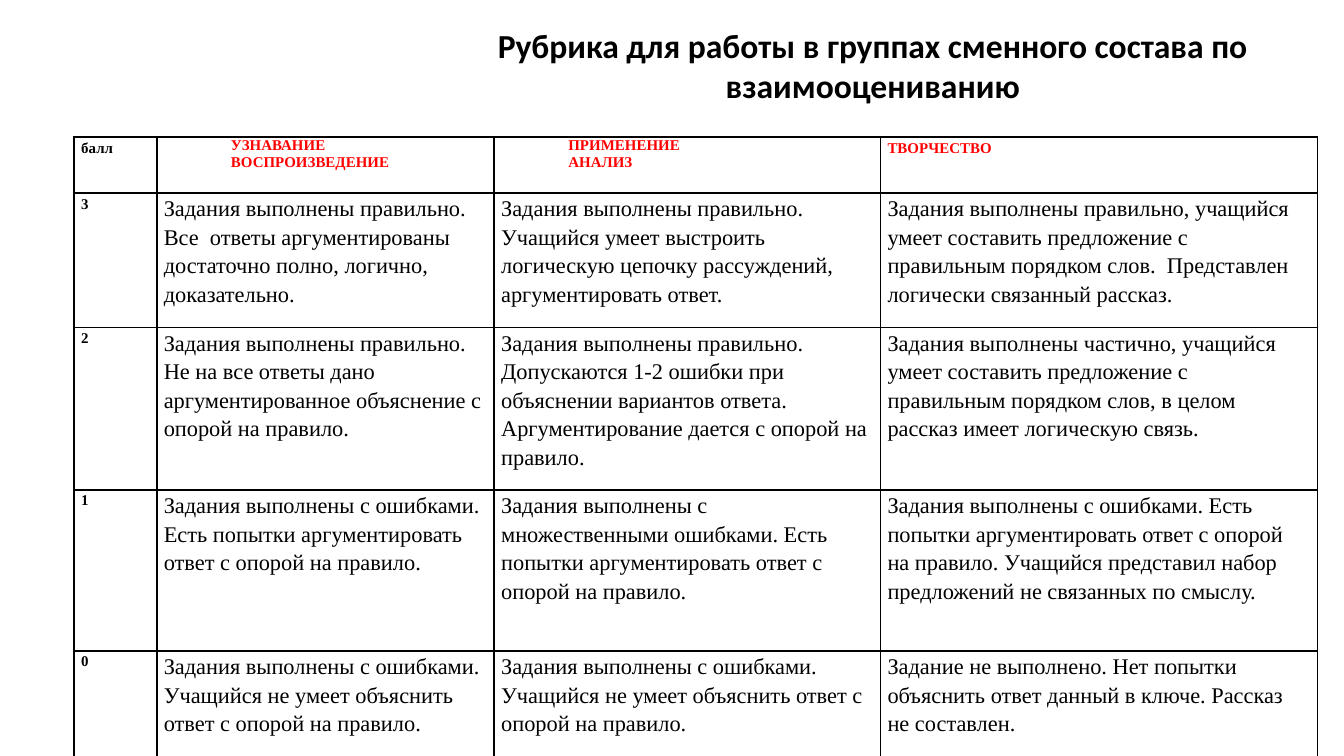
from pptx import Presentation
from pptx import util as u
from pptx.dml.color import RGBColor
from pptx.enum import text
from pptx.oxml.ns import qn
from lxml import etree

EMU_PER_PX = 9525
BLACK = RGBColor(0x00, 0x00, 0x00)
RED = RGBColor(0xFF, 0x00, 0x00)

TITLE = "Рубрика для работы в группах сменного состава по взаимооцениванию"
COLUMN_WIDTHS = [59, 241, 276, 312]
ROW_HEIGHTS = [40, 96, 116, 115, 76]
HEADER_INDENT = 48
CELL_INSET = 5

SCORE_HEADER = "балл"
LEVEL_HEADERS = [
    ["УЗНАВАНИЕ  ВОСПРОИЗВЕДЕНИЕ"],
    ["ПРИМЕНЕНИЕ ", "АНАЛИЗ"],
    ["ТВОРЧЕСТВО"],
]
CRITERIA = [
    ("3",
     "Задания выполнены правильно. Все  ответы аргументированы достаточно полно, "
     "логично, доказательно.",
     "Задания выполнены правильно. Учащийся умеет выстроить логическую цепочку "
     "рассуждений, аргументировать ответ.",
     "Задания выполнены правильно, учащийся умеет составить предложение с правильным "
     "порядком слов.  Представлен логически связанный рассказ."),
    ("2",
     "Задания выполнены правильно. Не на все ответы дано аргументированное объяснение "
     "с опорой на правило.",
     "Задания выполнены правильно. Допускаются 1-2 ошибки при объяснении вариантов "
     "ответа. Аргументирование дается с опорой на правило.",
     "Задания выполнены частично, учащийся умеет составить предложение с правильным "
     "порядком слов, в целом рассказ имеет логическую связь."),
    ("1",
     "Задания выполнены с ошибками. Есть попытки аргументировать ответ с опорой на "
     "правило.",
     "Задания выполнены с множественными ошибками. Есть попытки аргументировать ответ "
     "с опорой на правило.",
     "Задания выполнены с ошибками. Есть попытки аргументировать ответ с опорой на "
     "правило. Учащийся представил набор предложений не связанных по смыслу."),
    ("0",
     "Задания выполнены с ошибками. Учащийся не умеет объяснить ответ с опорой на "
     "правило.",
     "Задания выполнены с ошибками. Учащийся не умеет объяснить ответ с опорой на "
     "правило.",
     "Задание не выполнено. Нет попытки объяснить ответ данный в ключе. Рассказ не "
     "составлен."),
]


def px(length):
    return u.Emu(length * EMU_PER_PX)


def add_run(paragraph, wording, size, font="Times New Roman", color=BLACK, bold=False):
    run = paragraph.add_run()
    run.text = wording
    run.font.name = font
    run.font.size = u.Pt(size)
    run.font.bold = bold
    run.font.color.rgb = color


def add_title(slide):
    frame = slide.shapes.add_textbox(px(303), px(13), px(641), px(68)).text_frame
    frame.word_wrap = True
    frame.auto_size = text.MSO_AUTO_SIZE.SHAPE_TO_FIT_TEXT
    paragraph = frame.paragraphs[0]
    paragraph.alignment = text.PP_ALIGN.CENTER
    add_run(paragraph, TITLE, 18, font="Calibri", bold=True)


def set_borders(cell):
    properties = cell._tc.get_or_add_tcPr()
    for position, side in enumerate(("lnL", "lnR", "lnT", "lnB")):
        line = etree.Element(qn(f"a:{side}"), w=str(u.Pt(1)))
        fill = etree.SubElement(line, qn("a:solidFill"))
        etree.SubElement(fill, qn("a:srgbClr"), val=str(BLACK))
        properties.insert(position, line)


def fill_cell(cell, lines, size, color=BLACK, bold=False, indented=False):
    cell.margin_left = cell.margin_right = px(CELL_INSET)
    cell.margin_top = cell.margin_bottom = 0
    cell.fill.background()
    set_borders(cell)
    frame = cell.text_frame
    for number, wording in enumerate(lines):
        paragraph = frame.add_paragraph() if number else frame.paragraphs[0]
        if indented:
            paragraph.alignment = text.PP_ALIGN.JUSTIFY
            properties = paragraph._p.get_or_add_pPr()
            properties.set("marL", str(px(HEADER_INDENT)))
            properties.set("indent", "0")
        else:
            paragraph.line_spacing = 1.15
            paragraph.space_after = u.Pt(10)
        add_run(paragraph, wording, size, color=color, bold=bold)


def add_rubric(slide):
    frame = slide.shapes.add_table(
        len(ROW_HEIGHTS), len(COLUMN_WIDTHS), px(53), px(98),
        px(sum(COLUMN_WIDTHS)), px(sum(ROW_HEIGHTS)))
    table = frame.table
    table.first_row = table.horz_banding = False
    for column, width in zip(table.columns, COLUMN_WIDTHS):
        column.width = px(width)
    for row, height in zip(table.rows, ROW_HEIGHTS):
        row.height = px(height)

    # Header row: the last heading is not indented
    fill_cell(table.cell(0, 0), [SCORE_HEADER], 8, bold=True)
    for column, lines in enumerate(LEVEL_HEADERS, start=1):
        fill_cell(table.cell(0, column), lines, 8, RED, True,
                  indented=column < len(LEVEL_HEADERS))

    # One row per score
    for row, (score, *descriptions) in enumerate(CRITERIA, start=1):
        fill_cell(table.cell(row, 0), [score], 8, bold=True)
        for column, description in enumerate(descriptions, start=1):
            fill_cell(table.cell(row, column), [description], 12)


def main():
    presentation = Presentation()
    presentation.slide_width = px(960)
    presentation.slide_height = px(540)
    slide = presentation.slides.add_slide(presentation.slide_layouts[6])
    add_title(slide)
    add_rubric(slide)
    presentation.save("out.pptx")


if __name__ == "__main__":
    main()
